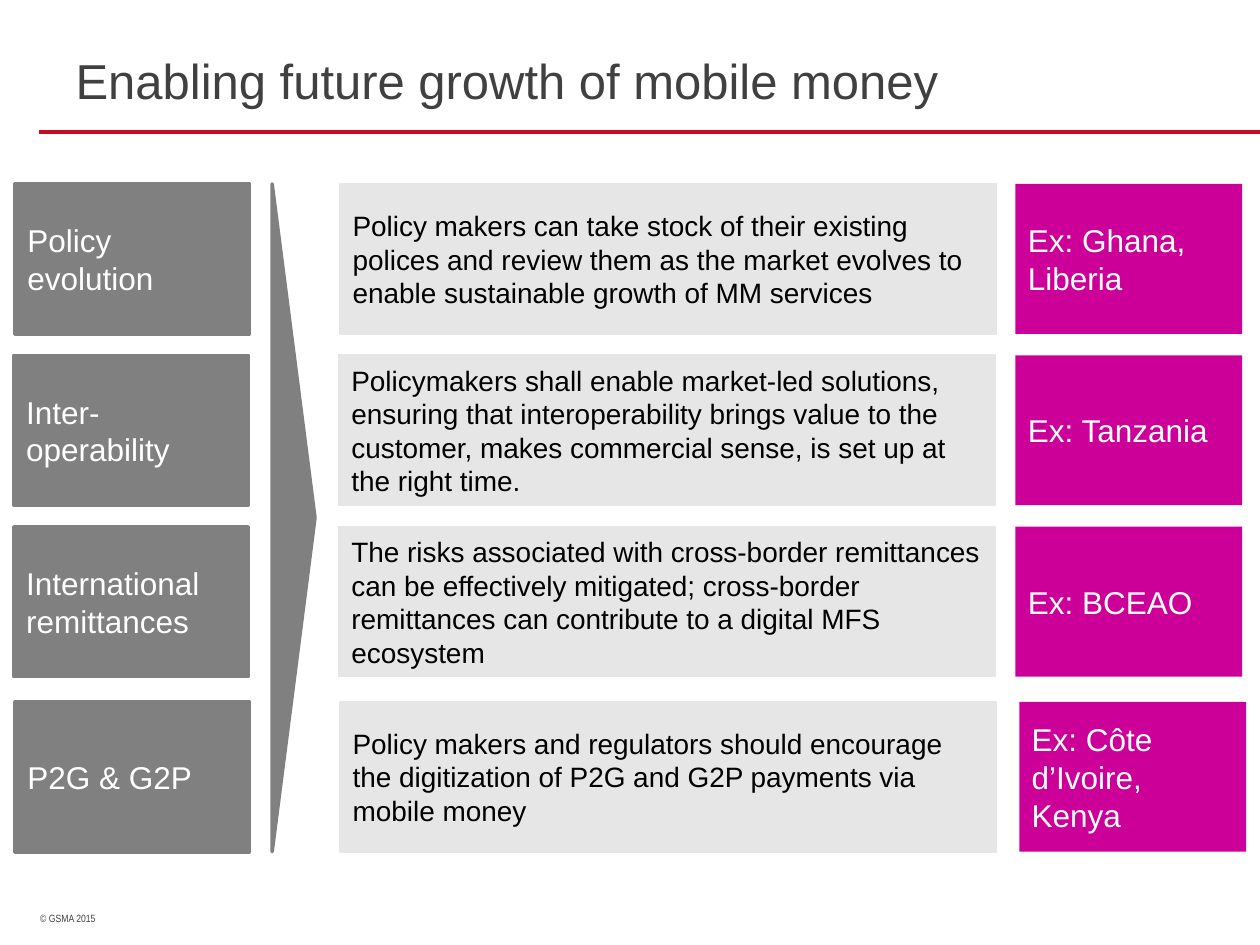
"""Build the slide on enabling future growth of mobile money."""
from pptx import Presentation
from pptx.dml.color import RGBColor
from pptx.enum.shapes import MSO_CONNECTOR, MSO_SHAPE
from pptx.enum.text import MSO_ANCHOR, PP_ALIGN
from pptx.oxml.ns import qn
from pptx.util import Inches, Pt
from lxml import etree

RECT, WEDGE = MSO_SHAPE.RECTANGLE, MSO_SHAPE.ISOSCELES_TRIANGLE
TOP, MIDDLE = MSO_ANCHOR.TOP, MSO_ANCHOR.MIDDLE
LEFT, STRAIGHT = PP_ALIGN.LEFT, MSO_CONNECTOR.STRAIGHT

TITLE = "Enabling future growth of mobile money"
NOTICE = "© GSMA 2015"
ROWS = [
    ("Policy evolution",
     "Policy makers can take stock of their existing polices and review them "
     "as the market evolves to enable sustainable growth of MM services",
     "Ex: Ghana, Liberia"),
    ("Inter-operability",
     "Policymakers shall enable market-led solutions, ensuring that "
     "interoperability brings value to the customer, makes commercial sense, "
     "is set up at the right time.",
     "Ex: Tanzania"),
    ("International remittances",
     "The risks associated with cross-border remittances can be effectively "
     "mitigated; cross-border remittances can contribute to a digital MFS "
     "ecosystem",
     "Ex: BCEAO"),
    ("P2G & G2P",
     "Policy makers and regulators should encourage the digitization of P2G "
     "and G2P payments via mobile money",
     "Ex: Côte d’Ivoire, Kenya"),
]
THEME = {
    "font": "Arial", "small_font": "Arial Narrow",
    "ink": "404040", "black": "000000", "white": "FFFFFF",
    "red": "CD0921", "gray": "808080", "pale": "E6E6E6", "pink": "CC0099",
    "title": 28, "label": 18, "body": 16, "small": 6,
}
TOPS = [1.46, 2.82, 4.18, 5.57]
LEFTS = [(0.12, 2.7, 8.06), (0.11, 2.69, 8.06),
         (0.11, 2.69, 8.06), (0.12, 2.7, 8.09)]
TALL = 1.19
COLS = [
    {"wide": 1.86, "fill": "gray", "edge": 2, "size": "label", "ink": "white"},
    {"wide": 5.21, "fill": "pale", "edge": 1, "size": "body", "ink": "black"},
    {"wide": 1.8, "fill": "pink", "edge": 0, "size": "label", "ink": "white"},
]


def color(name):
    return RGBColor.from_string(THEME[name])


def write(shape, text, size, ink="ink", font="font", anchor=TOP,
          inset=(0.1, 0.05)):
    frame = shape.text_frame
    frame.word_wrap = True
    frame.vertical_anchor = anchor
    frame.margin_left, frame.margin_top = map(Inches, inset)
    para = frame.paragraphs[0]
    para.text = text
    para.alignment = LEFT
    para.font.name = THEME[font]
    para.font.size = Pt(THEME[size])
    para.font.color.rgb = color(ink)


def block(slide, kind, box, fill, edge):
    shape = slide.shapes.add_shape(kind, *map(Inches, box))
    shape.shadow.inherit = False
    shape.fill.solid()
    shape.fill.fore_color.rgb = color(fill)
    if edge:
        shape.line.color.rgb = color(fill)
        shape.line.width = Pt(edge)
    else:
        shape.line.fill.background()
    return shape


def main():
    deck = Presentation()
    deck.slide_width, deck.slide_height = Inches(10), Inches(7.5)
    slide = deck.slides.add_slide(deck.slide_layouts[5])

    title = slide.shapes.title
    title.left, title.top = Inches(0.5), Inches(0.3)
    title.width, title.height = Inches(9), Inches(0.76)
    write(title, TITLE, "title", inset=(0.1, 0.1))

    rule = slide.shapes.add_connector(
        STRAIGHT, Inches(0.31), Inches(1.05), Inches(10), Inches(1.05))
    rule.line.color.rgb = color("red")
    rule.line.width = Pt(2.25)
    etree.SubElement(rule._element.spPr, qn("a:effectLst"))

    for row, top, lefts in zip(ROWS, TOPS, LEFTS):
        for text, left, col in zip(row, lefts, COLS):
            box = (left, top, col["wide"], TALL)
            cell = block(slide, RECT, box, col["fill"], col["edge"])
            write(cell, text, col["size"], col["ink"], anchor=MIDDLE)

    wedge = block(slide, WEDGE, (-0.32, 3.94, 5.3, 0.34), "gray", 2)
    wedge.rotation = 90

    note = slide.shapes.add_textbox(
        Inches(0.31), Inches(7.19), Inches(1.56), Inches(0.2))
    write(note, NOTICE, "small", font="small_font", inset=(0.01, 0.05))
    deck.save("out.pptx")


if __name__ == "__main__":
    main()
